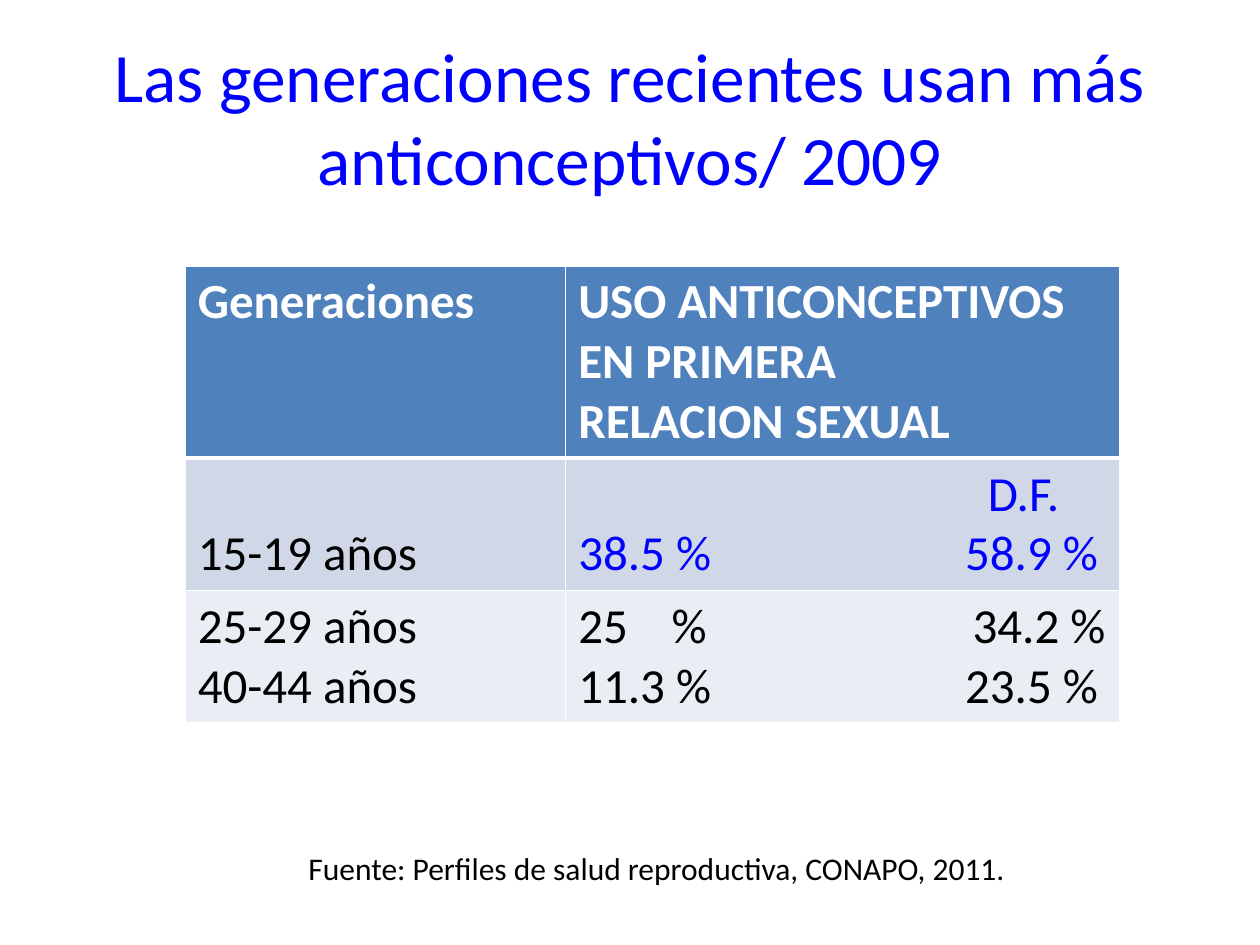
from dataclasses import dataclass

from lxml import etree
from pptx import Presentation
from pptx.dml.color import RGBColor
from pptx.enum.text import MSO_ANCHOR, MSO_AUTO_SIZE, PP_ALIGN
from pptx.oxml.ns import qn
from pptx.util import Inches, Pt

CENTER = PP_ALIGN.CENTER
MIDDLE = MSO_ANCHOR.MIDDLE
BOTTOM = MSO_ANCHOR.BOTTOM
TOP = MSO_ANCHOR.TOP
NO_FIT = MSO_AUTO_SIZE.NONE
GROW = MSO_AUTO_SIZE.SHAPE_TO_FIT_TEXT


@dataclass(frozen=True)
class Theme:
    font: str = "Calibri"
    blue: str = "0000FF"
    black: str = "000000"
    white: str = "FFFFFF"
    header: str = "4F81BD"
    band_dark: str = "D0D8E8"
    band_light: str = "E9EDF4"
    title_size: float = 39.6
    table_size: float = 28
    source_size: float = 18


theme = Theme()


def write(frame, lines, size, color, bold=False):
    frame.text = "\n".join(lines)
    for paragraph in frame.paragraphs:
        for run in paragraph.runs:
            run.font.name = theme.font
            run.font.size = Pt(size)
            run.font.bold = bold
            run.font.color.rgb = RGBColor.from_string(color)


def add_borders(cell, bottom_width):
    properties = cell._tc.get_or_add_tcPr()
    widths = {"a:lnL": 1, "a:lnR": 1, "a:lnT": 1, "a:lnB": bottom_width}
    for position, (side, width) in enumerate(widths.items()):
        border = etree.Element(qn(side), w=str(Pt(width)))
        fill = etree.SubElement(border, qn("a:solidFill"))
        etree.SubElement(fill, qn("a:srgbClr"), val=theme.white)
        properties.insert(position, border)


presentation = Presentation()
presentation.slide_width = Inches(10)
presentation.slide_height = Inches(7.5)
slide = presentation.slides.add_slide(presentation.slide_layouts[5])

title = slide.shapes.title
title.left, title.top = Inches(0.5), Inches(0.3)
title.width, title.height = Inches(9), Inches(1.25)
write(title.text_frame, ["Las generaciones recientes usan más anticonceptivos/ 2009"],
      theme.title_size, theme.blue)
title.text_frame.auto_size = NO_FIT
title.text_frame.vertical_anchor = MIDDLE
title.text_frame.paragraphs[0].alignment = CENTER

rows = [
    (["Generaciones"],
     ["USO ANTICONCEPTIVOS", "EN PRIMERA", "RELACION SEXUAL"],
     theme.header, theme.white, theme.white, 1.51),
    (["15-19 años"],
     ["\tD.F.", "38.5 %\t58.9 %"],
     theme.band_dark, theme.black, theme.blue, 1.03),
    (["25-29 años", "40-44 años"],
     ["25\t%\t34.2 %", "11.3 %\t23.5 %"],
     theme.band_light, theme.black, theme.black, 1.03),
]
tab_stops = {(1, 0): [3.25], (1, 1): [3.07], (2, 0): [0.74, 3.13], (2, 1): [3.07]}

usage = slide.shapes.add_table(3, 2, Inches(1.47), Inches(2.11),
                               Inches(7.42), Inches(3.57)).table
for column, width in zip(usage.columns, (3.02, 4.4)):
    column.width = Inches(width)

for row, (ages, shares, fill, age_color, share_color, height) in enumerate(rows):
    is_header = row == 0
    usage.rows[row].height = Inches(height)
    for column, (lines, color) in enumerate([(ages, age_color), (shares, share_color)]):
        cell = usage.cell(row, column)
        cell.fill.solid()
        cell.fill.fore_color.rgb = RGBColor.from_string(fill)
        cell.vertical_anchor = TOP if is_header else BOTTOM
        write(cell.text_frame, lines, theme.table_size, color, is_header)
        add_borders(cell, 3 if is_header else 1)

for (row, line), stops in tab_stops.items():
    paragraph = usage.cell(row, 1).text_frame.paragraphs[line]
    tabs = etree.SubElement(paragraph._p.get_or_add_pPr(), qn("a:tabLst"))
    for stop in stops:
        etree.SubElement(tabs, qn("a:tab"), pos=str(Inches(stop)), algn="l")

source = slide.shapes.add_textbox(Inches(2.35), Inches(6.69), Inches(5.87), Inches(0.4))
write(source.text_frame, ["Fuente: Perfiles de salud reproductiva, CONAPO, 2011."],
      theme.source_size, theme.black)
source.text_frame.word_wrap = False
source.text_frame.auto_size = GROW

presentation.save("out.pptx")
